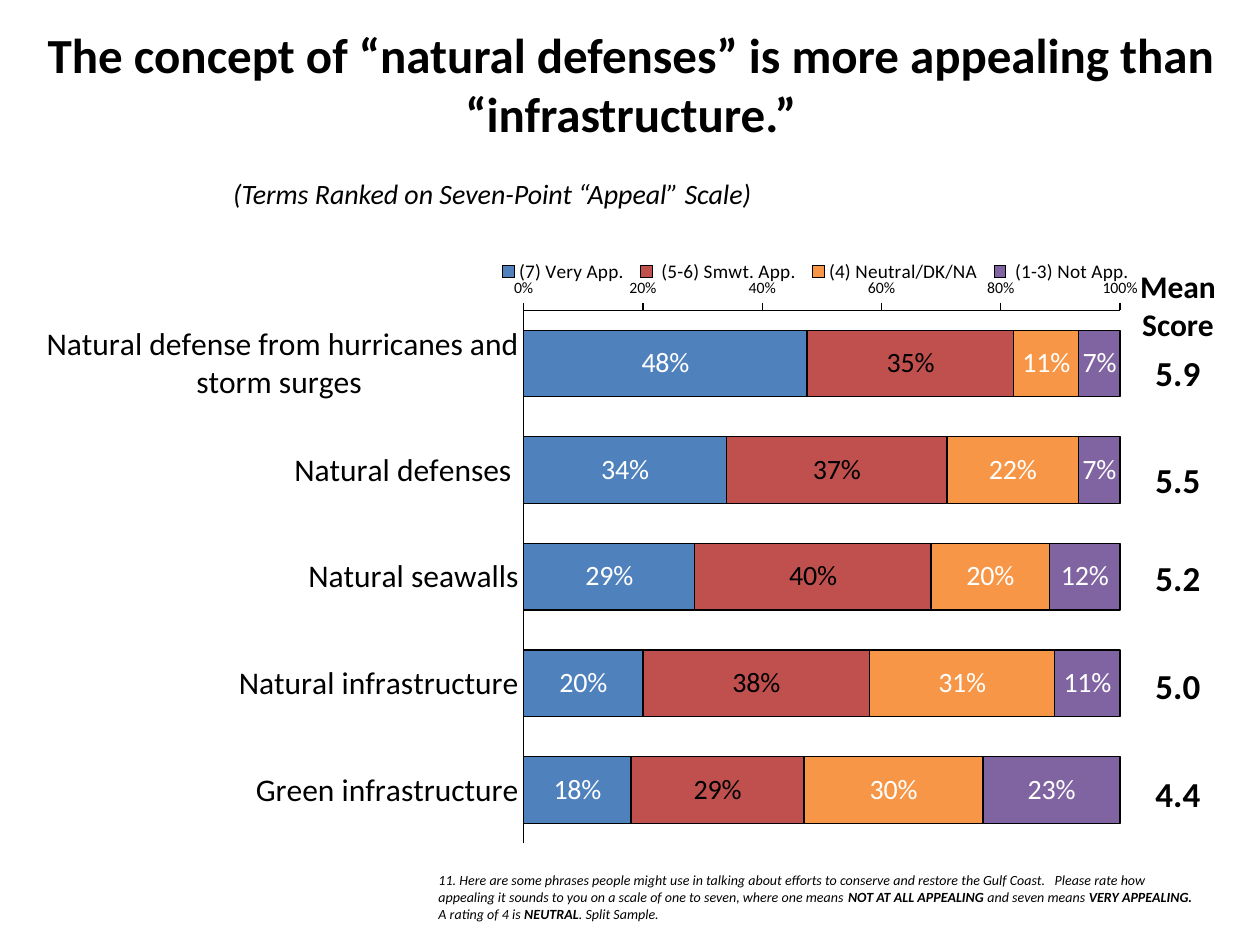
from dataclasses import dataclass

from lxml import etree
from pptx import Presentation
from pptx.chart.data import CategoryChartData
from pptx.dml.color import RGBColor
from pptx.enum.chart import (XL_AXIS_CROSSES, XL_CHART_TYPE, XL_LABEL_POSITION,
                             XL_LEGEND_POSITION, XL_TICK_MARK)
from pptx.enum.text import MSO_ANCHOR, PP_ALIGN
from pptx.oxml.ns import qn
from pptx.util import Cm, Pt

STACKED = XL_CHART_TYPE.BAR_STACKED_100
CROSS_MAXIMUM = XL_AXIS_CROSSES.MAXIMUM
LABEL_CENTER = XL_LABEL_POSITION.CENTER
LEGEND_TOP = XL_LEGEND_POSITION.TOP
TICK_NONE, TICK_OUTSIDE = XL_TICK_MARK.NONE, XL_TICK_MARK.OUTSIDE
LEFT, CENTER = PP_ALIGN.LEFT, PP_ALIGN.CENTER
TOP, MIDDLE, BOTTOM = MSO_ANCHOR.TOP, MSO_ANCHOR.MIDDLE, MSO_ANCHOR.BOTTOM
PLAIN_TABLE_STYLE = "{2D5ABB26-0587-4C30-8999-92F81FD0307C}"


@dataclass(frozen=True)
class Theme:
    font: str = "Calibri"
    black: RGBColor = RGBColor(0, 0, 0)
    white: RGBColor = RGBColor(255, 255, 255)
    blue: RGBColor = RGBColor(0x4F, 0x81, 0xBD)
    red: RGBColor = RGBColor(0xC0, 0x50, 0x4D)
    orange: RGBColor = RGBColor(0xF7, 0x96, 0x46)
    purple: RGBColor = RGBColor(0x80, 0x64, 0xA2)
    title: Pt = Pt(28)
    score: Pt = Pt(20)
    heading: Pt = Pt(18)
    caption: Pt = Pt(16)
    legend: Pt = Pt(11)
    axis: Pt = Pt(9)
    note: Pt = Pt(8)
    line: Pt = Pt(0.75)


THEME = Theme()

CATEGORIES = ["Natural defense from hurricanes and storm surges ", "Natural defenses ",
              "Natural seawalls", "Natural infrastructure", "Green infrastructure"]
SERIES = [
    ("(7) Very App.", [0.48, 0.34, 0.29, 0.2, 0.18], THEME.blue, THEME.white),
    (" (5-6) Smwt. App.", [0.35, 0.37, 0.4, 0.38, 0.29], THEME.red, THEME.black),
    ("(4) Neutral/DK/NA", [0.11, 0.22, 0.2, 0.31, 0.3], THEME.orange, THEME.white),
    (" (1-3) Not App.", [0.07, 0.07, 0.12, 0.11, 0.23], THEME.purple, THEME.white),
]
SCORE_ROWS = [
    (["Mean", "Score"], 1.42), (["5.9"], 1.04), (["5.5"], 2.16),
    (["5.2"], 1.98), (["5.0"], 2.18), (["4.4"], 2.18),
]
NOTE = [
    ("11. Here are some phrases people might use in talking about efforts to conserve "
     "and restore the Gulf Coast.   Please rate how appealing it sounds to you on a scale "
     "of one to seven, where one means ", False),
    ("NOT AT ALL APPEALING", True),
    (" and seven means ", False),
    ("VERY APPEALING.", True),
    ("  A rating of 4 is ", False),
    ("NEUTRAL", True),
    (". Split Sample.", False),
]


def apply(target, **values):
    for name, value in values.items():
        setattr(target, name, value)


def style_font(font, size, color=THEME.black, **values):
    apply(font, name=THEME.font, size=size, **values)
    font.color.rgb = color


def style_line(line):
    line.width = THEME.line
    line.color.rgb = THEME.black


def add_text(slide, box, runs, size, align=LEFT, anchor=TOP, italic=False):
    frame = slide.shapes.add_textbox(*map(Cm, box)).text_frame
    apply(frame, word_wrap=True, vertical_anchor=anchor)
    paragraph = frame.paragraphs[0]
    paragraph.alignment = align
    for text, bold in runs:
        run = paragraph.add_run()
        run.text = text
        style_font(run.font, size, bold=bold, italic=italic)


def set_layout(element, index, fractions, inner=False):
    for previous in element.findall(qn("c:layout")):
        element.remove(previous)
    layout = etree.Element(qn("c:layout"))
    manual = etree.SubElement(layout, qn("c:manualLayout"))
    settings = [("layoutTarget", "inner")] if inner else []
    settings += [("xMode", "edge"), ("yMode", "edge")]
    settings += zip("xywh", map(str, fractions))
    for tag, value in settings:
        etree.SubElement(manual, qn(f"c:{tag}")).set("val", value)
    element.insert(index, layout)


def style_axes(chart):
    category, value = chart.category_axis, chart.value_axis
    apply(category, reverse_order=True, crosses=CROSS_MAXIMUM, major_tick_mark=TICK_NONE)
    apply(value, minimum_scale=0, maximum_scale=1, major_unit=0.2,
          major_tick_mark=TICK_OUTSIDE)
    apply(value.tick_labels, number_format="0%", number_format_is_linked=False)
    for axis, size in ((category, THEME.heading), (value, THEME.axis)):
        apply(axis, has_major_gridlines=False, minor_tick_mark=TICK_NONE)
        style_line(axis.format.line)
        style_font(axis.tick_labels.font, size)


def add_appeal_chart(slide):
    data = CategoryChartData(number_format="0%")
    data.categories = CATEGORIES
    for name, values, *_ in SERIES:
        data.add_series(name, values)
    box = map(Cm, (0.71, 4.9, 22.48, 12.78))
    chart = slide.shapes.add_chart(STACKED, *box, data).chart
    apply(chart, has_title=False, has_legend=True)
    style_font(chart.font, THEME.heading)
    style_axes(chart)

    apply(chart.legend, position=LEGEND_TOP, include_in_layout=False)
    style_font(chart.legend.font, THEME.legend)
    set_layout(chart.legend._element, 1, (0.41, 0.02, 0.58, 0.05))

    plot = chart.plots[0]
    apply(plot, gap_width=60, overlap=100, vary_by_categories=False)
    set_layout(plot._element.getparent(), 0, (0.438, 0.106, 0.535, 0.841), inner=True)
    for series, (_, _, color, label_color) in zip(plot.series, SERIES):
        series.format.fill.solid()
        series.format.fill.fore_color.rgb = color
        style_line(series.format.line)
        labels = series.data_labels
        apply(labels, show_value=True, number_format="0%",
              number_format_is_linked=False, position=LABEL_CENTER)
        style_font(labels.font, THEME.caption, label_color)


def add_score_table(slide):
    height = sum(row_height for _, row_height in SCORE_ROWS)
    box = map(Cm, (22.5, 5.38, 2.49, height))
    table = slide.shapes.add_table(len(SCORE_ROWS), 1, *box).table
    apply(table, first_row=False, horz_banding=False)
    table._tbl.tblPr.find(qn("a:tableStyleId")).text = PLAIN_TABLE_STYLE
    for index, (lines, row_height) in enumerate(SCORE_ROWS):
        table.rows[index].height = Cm(row_height)
        cell = table.cell(index, 0)
        cell.fill.background()
        apply(cell, margin_left=Cm(0.03), margin_right=Cm(0.03), margin_top=Cm(0.03),
              margin_bottom=0, vertical_anchor=BOTTOM if index else MIDDLE)
        cell.text = "\n".join(lines)
        for paragraph in cell.text_frame.paragraphs:
            paragraph.alignment = CENTER
            style_font(paragraph.runs[0].font,
                       THEME.score if index else THEME.heading, bold=True)


def main():
    presentation = Presentation()
    apply(presentation, slide_width=Cm(25.4), slide_height=Cm(19.05))
    slide = presentation.slides.add_slide(presentation.slide_layouts[6])
    add_appeal_chart(slide)
    title = "The concept of “natural defenses” is more appealing than “infrastructure.”"
    add_text(slide, (0.41, 0.46, 24.61, 2.46), [(title, True)], THEME.title, CENTER, MIDDLE)
    add_text(slide, (8.59, 17.42, 15.85, 1.32), NOTE, THEME.note,
             anchor=MIDDLE, italic=True)
    add_score_table(slide)
    caption = "(Terms Ranked on Seven-Point “Appeal” Scale)"
    add_text(slide, (4.45, 3.43, 15.9, 0.94), [(caption, False)], THEME.caption, italic=True)
    presentation.save("out.pptx")


if __name__ == "__main__":
    main()
